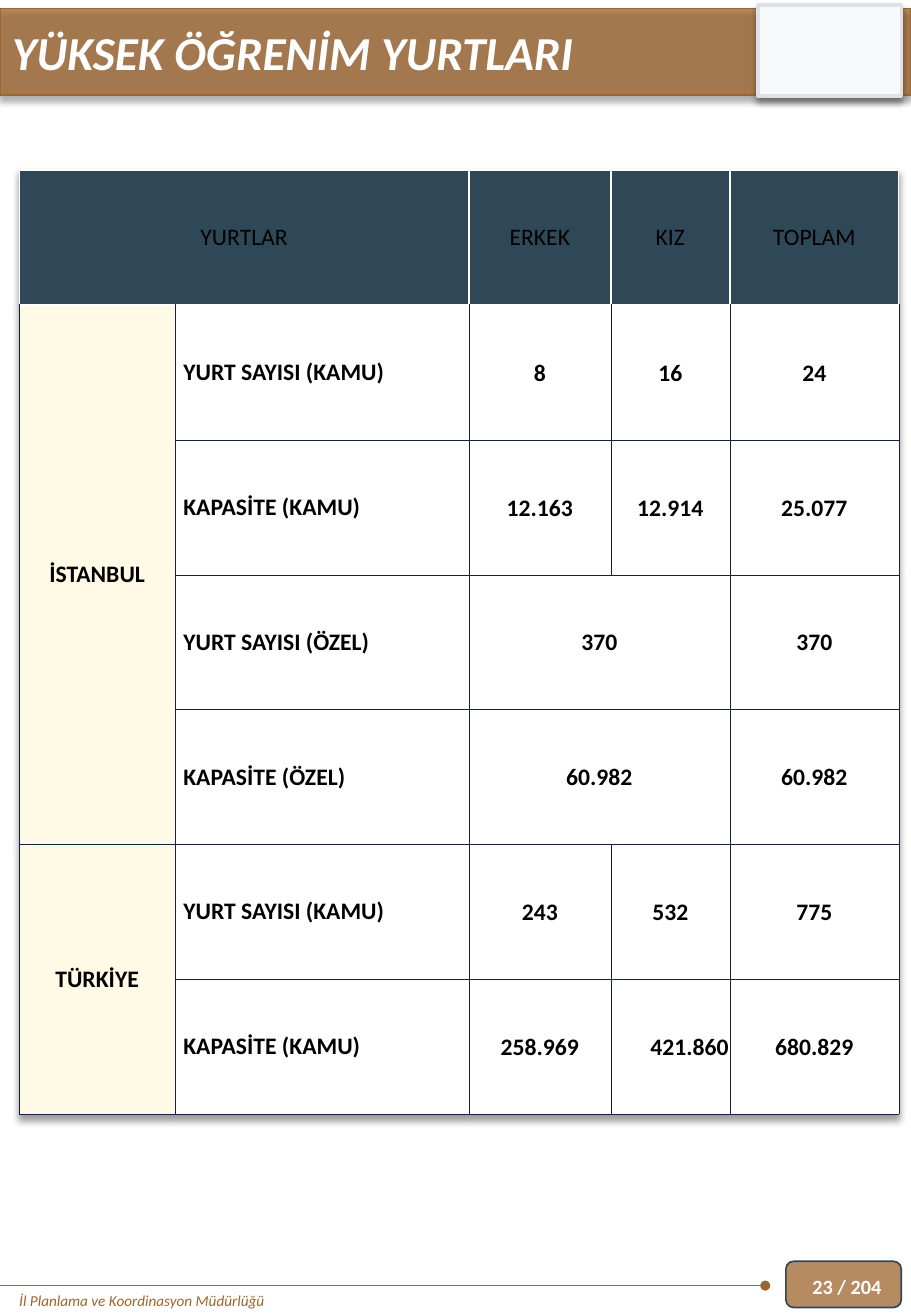
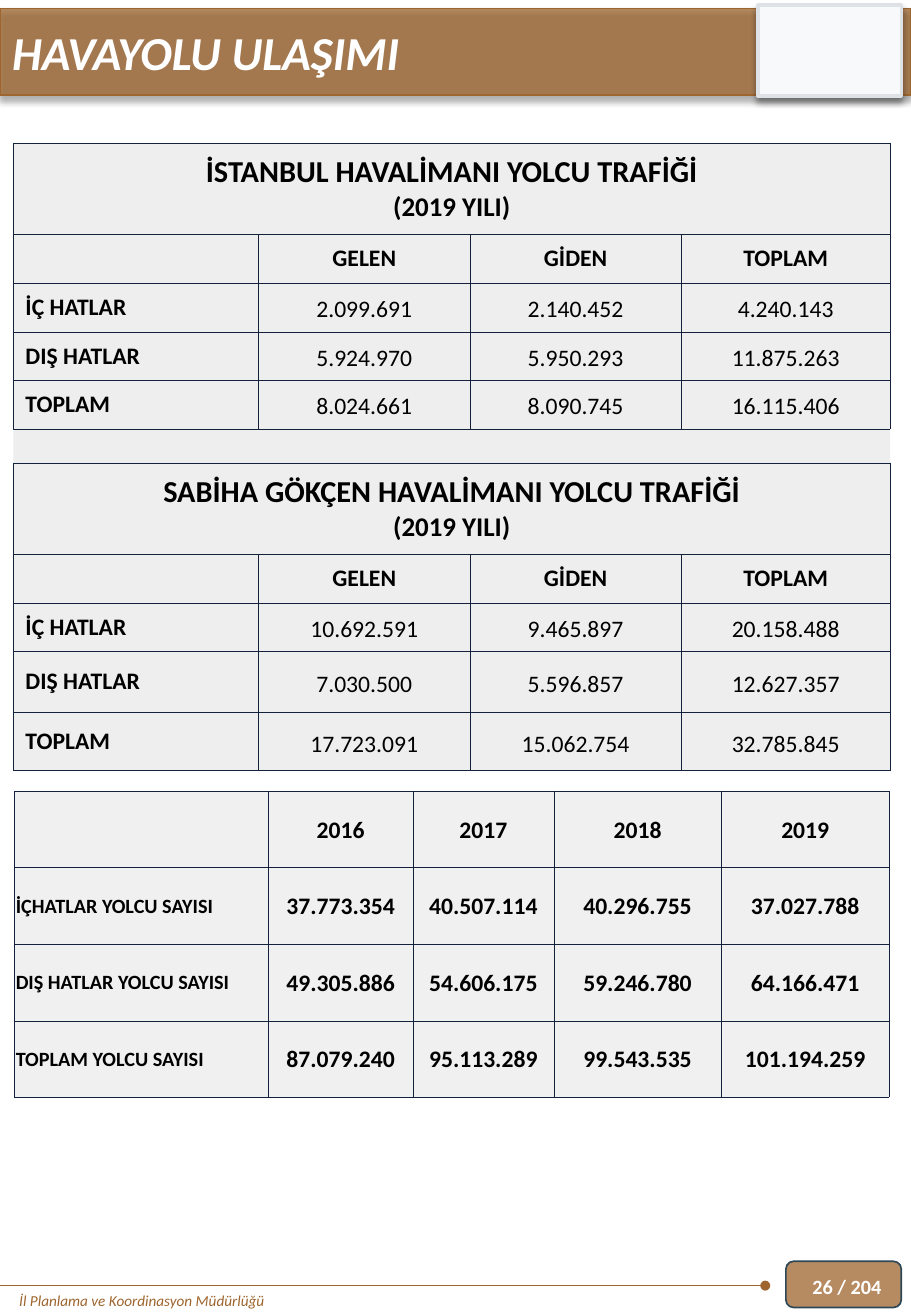
import dataclasses
import typing

import pptx
import pptx.dml.color
import pptx.enum.shapes
import pptx.enum.text
import pptx.oxml
import pptx.oxml.ns
import pptx.util

Inches = pptx.util.Inches
Pt = pptx.util.Pt
RGBColor = pptx.dml.color.RGBColor
Shape = pptx.enum.shapes.MSO_SHAPE
Align = pptx.enum.text.PP_ALIGN
Anchor = pptx.enum.text.MSO_ANCHOR

FONT = "Calibri"
BROWN = RGBColor(0x9E, 0x65, 0x2E)
SLATE = RGBColor(0x2F, 0x48, 0x58)
NAVY = RGBColor(0x14, 0x21, 0x3D)
CREAM = RGBColor(0xFF, 0xFA, 0xE5)
GREY = RGBColor(0xE7, 0xE6, 0xE6)
PALE = RGBColor(0xF8, 0xF9, 0xFA)
SILVER = RGBColor(0xDE, 0xE2, 0xE6)
WHITE = RGBColor(0xFF, 0xFF, 0xFF)
BLACK = RGBColor(0, 0, 0)

SHADOW = ('<a:outerShdw {ns} blurRad="50800" dist="38100" dir="5400000" algn="t" rotWithShape="0">'
          '<a:srgbClr val="000000"><a:alpha val="40000"/></a:srgbClr></a:outerShdw>')


class Edge(typing.NamedTuple):
    color: RGBColor
    width: float


class Merge(typing.NamedTuple):
    row: int
    col: int
    last_row: int
    last_col: int


DARK = Edge(NAVY, 0.25)
LIGHT = Edge(WHITE, 1)


@dataclasses.dataclass(frozen=True)
class Look:
    """Cell format; edges run left, right, top, bottom, insets left, top, right, bottom."""
    fill: RGBColor = WHITE
    alpha: int = 100
    sizes: tuple[int, ...] = (14,)
    bold: bool = True
    align: Align = Align.CENTER
    inset: tuple[float, ...] = (0.01, 0.01, 0.01, 0)
    leading: float = 1.0
    edges: tuple[Edge | None, ...] = (DARK,) * 4


@dataclasses.dataclass(frozen=True)
class Grid:
    left: float
    top: float
    cols: list[float]
    rows: list[float]
    texts: list[list[str]]
    look: typing.Callable[[int, int], Look]
    merges: tuple[Merge, ...] = ()
    shadow: bool = False


def node(xml: str) -> typing.Any:
    return pptx.oxml.parse_xml(xml.format(ns=pptx.oxml.ns.nsdecls("a")))


def fade(host: typing.Any, alpha: int) -> None:
    """Make the solid fill of a shape or cell translucent."""
    color = host.find(pptx.oxml.ns.qn("a:solidFill"))[0]
    color.append(node(f'<a:alpha {{ns}} val="{alpha * 1000}"/>'))


def style(para, size: float, color: RGBColor, bold: bool = False, italic: bool = False) -> None:
    font = para.font
    font.name, font.size = FONT, Pt(size)
    font.bold, font.italic = bold, italic
    font.color.rgb = color


# Parts shared by the slides
def add_box(slide, kind: Shape, at: tuple[float, ...], fill: RGBColor, line: Edge,
            alpha: int = 100, shadow: bool = False) -> None:
    box = slide.shapes.add_shape(kind, *map(Inches, at))
    box.fill.solid()
    box.fill.fore_color.rgb = fill
    box.line.color.rgb, box.line.width = line.color, Pt(line.width)
    box.shadow.inherit = False
    props = box.element.spPr
    if alpha < 100:
        fade(props, alpha)
    if shadow:
        props.find(pptx.oxml.ns.qn("a:effectLst")).append(node(SHADOW))


def add_text(slide, at: tuple[float, ...], text: str, size: float, color: RGBColor,
             anchor: Anchor = Anchor.TOP, bold: bool = False, italic: bool = False) -> None:
    frame = slide.shapes.add_textbox(*map(Inches, at)).text_frame
    frame.word_wrap = True
    frame.vertical_anchor = anchor
    frame.text = text
    style(frame.paragraphs[0], size, color, bold, italic)


def set_title(slide, text: str) -> None:
    title = slide.shapes.title
    title.left, title.top = Inches(0), Inches(0.14)
    title.width, title.height = Inches(7.5), Inches(0.57)
    frame = title.text_frame
    frame.text = text
    frame.word_wrap = True
    frame.auto_size = pptx.enum.text.MSO_AUTO_SIZE.NONE
    frame.vertical_anchor = Anchor.TOP
    frame.paragraphs[0].alignment = Align.LEFT
    style(frame.paragraphs[0], 28, WHITE, bold=True, italic=True)
    # Bring the title in front of its band
    title.element.getparent().append(title.element)


def add_page(deck, title: str, number: int):
    slide = deck.slides.add_slide(deck.slide_layouts[5])
    add_box(slide, Shape.ROUNDED_RECTANGLE, (6.47, 10.38, 0.95, 0.38), BROWN, Edge(SLATE, 1), 75)
    add_box(slide, Shape.RECTANGLE, (0, 0.07, 7.5, 0.71), BROWN, Edge(BROWN, 1), 75, True)
    add_box(slide, Shape.RECTANGLE, (6.24, 0.04, 1.18, 0.75), PALE, Edge(SILVER, 2), shadow=True)

    rule = slide.shapes.add_connector(pptx.enum.shapes.MSO_CONNECTOR.STRAIGHT,
                                      Inches(6.3), Inches(10.58), Inches(0), Inches(10.58))
    rule.line.color.rgb, rule.line.width = BROWN, Pt(0.5)
    rule.line._get_or_add_ln().append(node('<a:headEnd {ns} type="oval"/>'))
    rule.element.spPr.append(node('<a:effectLst {ns}/>'))

    add_text(slide, (0.06, 10.58, 4.69, 0.25), "İl Planlama ve Koordinasyon Müdürlüğü",
             9, BROWN, italic=True)
    add_text(slide, (6.59, 10.38, 1.15, 0.42), f"{number} / 204", 12, WHITE, Anchor.MIDDLE, True)
    set_title(slide, title)
    return slide


# Tables
def fill_cell(cell, text: str, look: Look) -> None:
    cell.text = text
    cell.vertical_anchor = Anchor.MIDDLE
    (cell.margin_left, cell.margin_top,
     cell.margin_right, cell.margin_bottom) = map(Inches, look.inset)
    for para, size in zip(cell.text_frame.paragraphs, look.sizes):
        para.alignment = look.align
        para.line_spacing = look.leading
        style(para, size, BLACK, look.bold)
        if not text:
            para._p.append(node(f'<a:endParaRPr {{ns}} sz="{size * 100}"/>'))
    cell.fill.solid()
    cell.fill.fore_color.rgb = look.fill
    props = cell._tc.tcPr
    if look.alpha < 100:
        fade(props, look.alpha)
    for place, (side, edge) in enumerate(zip("LRTB", look.edges)):
        if edge:
            line = (f'<a:ln{side} {{ns}} w="{int(Pt(edge.width))}"><a:solidFill>'
                    f'<a:srgbClr val="{edge.color}"/></a:solidFill></a:ln{side}>')
        else:
            line = f'<a:ln{side} {{ns}} w="0"><a:noFill/></a:ln{side}>'
        props.insert(place, node(line))


def add_grid(slide, grid: Grid) -> None:
    frame = slide.shapes.add_table(len(grid.rows), len(grid.cols), Inches(grid.left),
                                   Inches(grid.top), Inches(sum(grid.cols)),
                                   Inches(sum(grid.rows)))
    table = frame.table
    table.first_row = table.horz_banding = False
    for col, width in zip(table.columns, grid.cols):
        col.width = Inches(width)
    for row, height in zip(table.rows, grid.rows):
        row.height = Inches(height)
    for r, texts in enumerate(grid.texts):
        for c in range(len(grid.cols)):
            text = texts[c] if c < len(texts) else ""
            fill_cell(table.cell(r, c), text, grid.look(r, c))
    for m in grid.merges:
        table.cell(m.row, m.col).merge(table.cell(m.last_row, m.last_col))
    if grid.shadow:
        effect = node('<a:effectLst {ns}/>')
        effect.append(node(SHADOW))
        table._tbl.tblPr.insert(0, effect)


# Looks by row and column
ROOMY = (0.07, 0.04, 0.07, 0.04)
NORMAL = (0.1, 0.05, 0.1, 0.05)


def dorm_look(r: int, c: int) -> Look:
    if r == 0:
        return Look(SLATE, bold=False, inset=ROOMY, edges=(LIGHT,) * 4)
    edges = (DARK, DARK, LIGHT if r == 1 else DARK, DARK)
    if c == 0:
        return Look(CREAM, inset=ROOMY, edges=edges)
    if c == 1:
        return Look(align=Align.LEFT, inset=ROOMY, edges=edges)
    return Look(align=Align.RIGHT if (r, c) == (6, 3) else Align.CENTER, edges=edges)


def year_look(r: int, c: int) -> Look:
    base = Look(GREY, 60)
    return base if c else dataclasses.replace(base, sizes=(12,), align=Align.LEFT)


def port_look(r: int, c: int) -> Look:
    base = Look(GREY, 65, inset=NORMAL)
    if r == 5:
        return dataclasses.replace(base, sizes=(8,), inset=(0,) * 4,
                                   edges=(None, None, DARK, DARK))
    part = r % 6
    if part == 0:
        return dataclasses.replace(base, sizes=(18, 16))
    if part == 1:
        return base
    if c == 0:
        return dataclasses.replace(base, align=Align.LEFT)
    inset = (0.05, 0, 0.05, 0) if r < 5 else (0.01, 0.01, 0.01, 0)
    return dataclasses.replace(base, bold=False, inset=inset, leading=1.15)


DORMS = Grid(
    0.16, 1.4, [1.28, 2.42, 1.17, 0.98, 1.39], [1.11] * 7,
    [["YURTLAR", "", "ERKEK", "KIZ", "TOPLAM"],
     ["İSTANBUL", "YURT SAYISI (KAMU)", "8", "16", "24"],
     ["", "KAPASİTE (KAMU)", "12.163", "12.914", "25.077"],
     ["", "YURT SAYISI (ÖZEL)", "370", "", "370"],
     ["", "KAPASİTE (ÖZEL)", "60.982", "", "60.982"],
     ["TÜRKİYE", "YURT SAYISI (KAMU)", "243", "532", "775"],
     ["", "KAPASİTE (KAMU)", "258.969", "421.860", "680.829"]],
    dorm_look,
    (Merge(0, 0, 0, 1), Merge(1, 0, 4, 0), Merge(3, 2, 3, 3), Merge(4, 2, 4, 3),
     Merge(5, 0, 6, 0)),
    shadow=True)

YEARS = Grid(
    0.12, 6.51, [2.09, 1.19, 1.16, 1.38, 1.38], [0.63] * 4,
    [["", "2016", "2017", "2018", "2019"],
     ["İÇHATLAR YOLCU SAYISI", "37.773.354", "40.507.114", "40.296.755", "37.027.788"],
     ["DIŞ HATLAR YOLCU SAYISI", "49.305.886", "54.606.175", "59.246.780", "64.166.471"],
     ["TOPLAM YOLCU SAYISI", "87.079.240", "95.113.289", "99.543.535", "101.194.259"]],
    year_look)

HEADS = ["", "GELEN", "GİDEN", "TOPLAM"]
PORTS = Grid(
    0.11, 1.18, [2.02, 1.74, 1.74, 1.72],
    [0.75, 0.4, 0.4, 0.4, 0.4, 0.28, 0.75, 0.4, 0.4, 0.5, 0.48],
    [["İSTANBUL HAVALİMANI YOLCU TRAFİĞİ\n(2019 YILI)"],
     HEADS,
     ["İÇ HATLAR", "2.099.691", "2.140.452", "4.240.143"],
     ["DIŞ HATLAR", "5.924.970", "5.950.293", "11.875.263"],
     ["TOPLAM", "8.024.661", "8.090.745", "16.115.406"],
     [],
     ["SABİHA GÖKÇEN HAVALİMANI YOLCU TRAFİĞİ\n(2019 YILI)"],
     HEADS,
     ["İÇ HATLAR", "10.692.591", "9.465.897", "20.158.488"],
     ["DIŞ HATLAR", "7.030.500", "5.596.857", "12.627.357"],
     ["TOPLAM", "17.723.091", "15.062.754", "32.785.845"]],
    port_look,
    tuple(Merge(r, 0, r, 3) for r in (0, 5, 6)))


def main() -> None:
    deck = pptx.Presentation()
    deck.slide_width, deck.slide_height = Inches(7.5), Inches(10.83)
    add_grid(add_page(deck, "YÜKSEK ÖĞRENİM YURTLARI", 23), DORMS)
    flights = add_page(deck, "HAVAYOLU ULAŞIMI", 26)
    for grid in (YEARS, PORTS):
        add_grid(flights, grid)
    deck.save("out.pptx")


if __name__ == "__main__":
    main()
